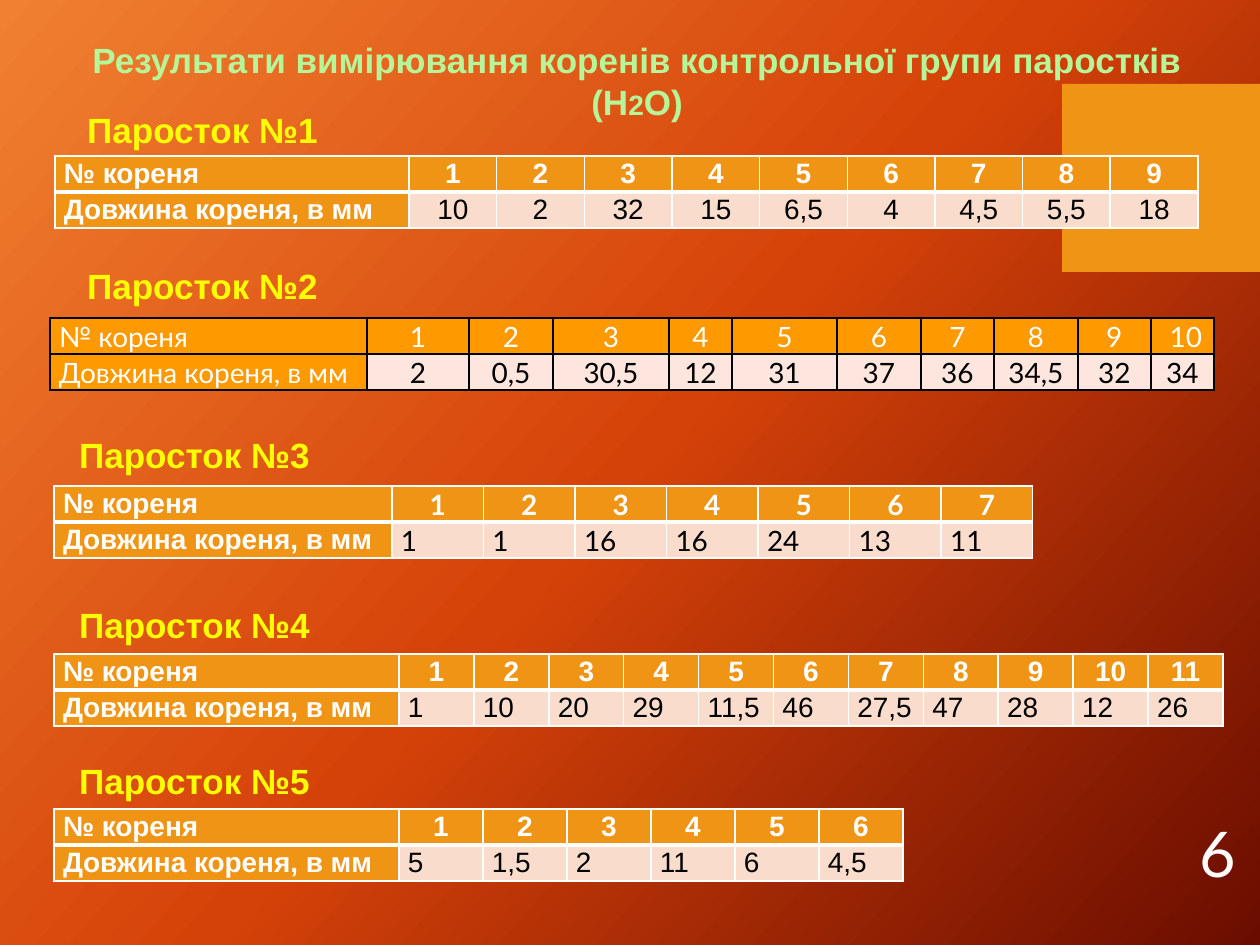
from copy import deepcopy

from lxml import etree
from pptx import Presentation
from pptx import util as u
from pptx.dml.color import RGBColor
from pptx.enum import shapes, text
from pptx.oxml.ns import qn

PX = u.Inches(1) / 126
COLORS = {
    "white": "FFFFFF", "black": "000000", "yellow": "FFFF00", "green": "B7F698",
    "orange": "F09415", "amber": "FF9900", "peach": "F9DCCC", "pink": "FEE5DE",
}
BACKGROUND = [(0, "F18031"), (0.5, "D54209"), (1, "6A0D00")]
LEFT, CENTER = text.PP_ALIGN.LEFT, text.PP_ALIGN.CENTER
ROW_HEIGHT = 36
ROW_LABELS = ("№ кореня", "Довжина кореня, в мм")


def px(value):
    return u.Emu(round(value * PX))


def rgb(name):
    return RGBColor.from_string(COLORS[name])


def write(frame, runs, size=16, font="Arial", color="black", bold=False,
          align=LEFT, spacing=None):
    """Fill a text frame with one paragraph; runs is a string or (string, size) pairs."""
    paragraph = frame.paragraphs[0]
    paragraph.alignment = align
    if spacing:
        paragraph.line_spacing = spacing
    for words, run_size in [(runs, size)] if isinstance(runs, str) else runs:
        run = paragraph.add_run()
        run.text = words
        run.font.size = u.Pt(run_size)
        run.font.name = font
        run.font.bold = bold
        run.font.color.rgb = rgb(color)


def add_label(slide, box, runs, anchor=text.MSO_ANCHOR.TOP, **style):
    frame = slide.shapes.add_textbox(*map(px, box)).text_frame
    frame.word_wrap = True
    frame.vertical_anchor = anchor
    write(frame, runs, **style)


def paint_background(slide):
    fill = slide.background.fill
    fill.gradient()
    stop_list = next(slide.element.iter(qn("a:gsLst")))
    stop_list.insert(1, deepcopy(stop_list[0]))
    for stop, (position, color) in zip(fill.gradient_stops, BACKGROUND):
        stop.position = position
        stop.color.rgb = RGBColor.from_string(color)
    fill.gradient_angle = 360 - 42


def add_accent(slide, box):
    accent = slide.shapes.add_shape(shapes.MSO_SHAPE.RECTANGLE, *map(px, box))
    accent.shadow.inherit = False
    accent.fill.solid()
    accent.fill.fore_color.rgb = rgb("orange")
    accent.line.fill.background()


def set_borders(cell, color, **widths):
    properties = cell._tc.get_or_add_tcPr()
    for side in "LRTB":
        line = etree.SubElement(properties, qn(f"a:ln{side}"),
                                w=str(u.Pt(widths.get(side, 1))))
        solid = etree.SubElement(line, qn("a:solidFill"))
        etree.SubElement(solid, qn("a:srgbClr"), val=COLORS[color])


def even_columns(width, label_width, count):
    return [label_width] + [(width - label_width) / count] * count


def add_root_table(slide, left, top, columns, lengths, numbers=None, align=LEFT,
                   head="orange", body="peach", border="white", divider=3,
                   label_font="Arial", number_font="Arial", bold=True):
    numbers = numbers or [str(i + 1) for i in range(len(lengths))]
    rows = [[ROW_LABELS[0], *numbers], [ROW_LABELS[1], *lengths]]
    table = slide.shapes.add_table(2, len(columns), px(left), px(top),
                                   px(sum(columns)), px(2 * ROW_HEIGHT)).table
    table.horz_banding = False
    for column, width in zip(table.columns, columns):
        column.width = px(width)
    for r, row in enumerate(rows):
        for c, words in enumerate(row):
            cell = table.cell(r, c)
            is_value = r == 1 and c > 0
            cell.margin_left = cell.margin_right = px(9)
            cell.margin_top = cell.margin_bottom = 0
            set_borders(cell, border, **{"T" if r else "B": divider})
            cell.fill.solid()
            cell.fill.fore_color.rgb = rgb(body if is_value else head)
            write(cell.text_frame, words, spacing=1.07,
                  font=number_font if c else label_font,
                  color="black" if is_value else "white",
                  bold=bold and not is_value,
                  align=LEFT if c == 0 else align if is_value else CENTER)


def main():
    deck = Presentation()
    deck.slide_width, deck.slide_height = px(1260), px(945)
    slide = deck.slides.add_slide(deck.slide_layouts[6])

    # Backdrop, page number and title
    paint_background(slide)
    add_accent(slide, (1062, 84, 198, 188))
    add_label(slide, (1187, 777, 73, 150), "6", anchor=text.MSO_ANCHOR.MIDDLE,
              size=36, font="Lato", color="white")
    add_label(slide, (54, 32, 1166, 97),
              [("Результати вимірювання коренів контрольної групи паростків (Н", 20),
               ("2", 16), ("О)", 20)],
              color="green", bold=True, align=CENTER)

    # Sprout headings
    headings = [(55, 102, 295), (64, 258, 277), (47, 427, 295),
                (47, 597, 295), (47, 753, 295)]
    for number, (left, top, width) in enumerate(headings, 1):
        add_label(slide, (left, top, width, 55), f"Паросток №{number}",
                  size=20, color="yellow", bold=True, align=CENTER)

    # Root lengths of each sprout
    add_root_table(slide, 55, 156, even_columns(1143, 354, 9),
                   ["10", "2", "32", "15", "6,5", "4", "4,5", "5,5", "18"],
                   align=CENTER)
    add_root_table(slide, 50, 318,
                   [317, 102, 84, 116, 63, 105, 84, 73, 84, 73, 63],
                   ["2", "0,5", "30,5", "12", "31", "37", "36", "34,5", "32", "34"],
                   numbers=[*"123456789", " 10"], align=CENTER,
                   head="amber", body="pink", border="black", divider=1,
                   label_font="Lato", number_font="Lato", bold=False)
    add_root_table(slide, 54, 486, even_columns(979, 338, 7),
                   ["1", "1", "16", "16", "24", "13", "11"], number_font="Lato")
    add_root_table(slide, 54, 654, even_columns(1169, 345, 11),
                   ["1", "10", "20", "29", "11,5", "46", "27,5", "47", "28", "12", "26"])
    add_root_table(slide, 54, 809, even_columns(849, 345, 6),
                   ["5", "1,5", "2", "11", "6", "4,5"])

    deck.save("out.pptx")


if __name__ == "__main__":
    main()
